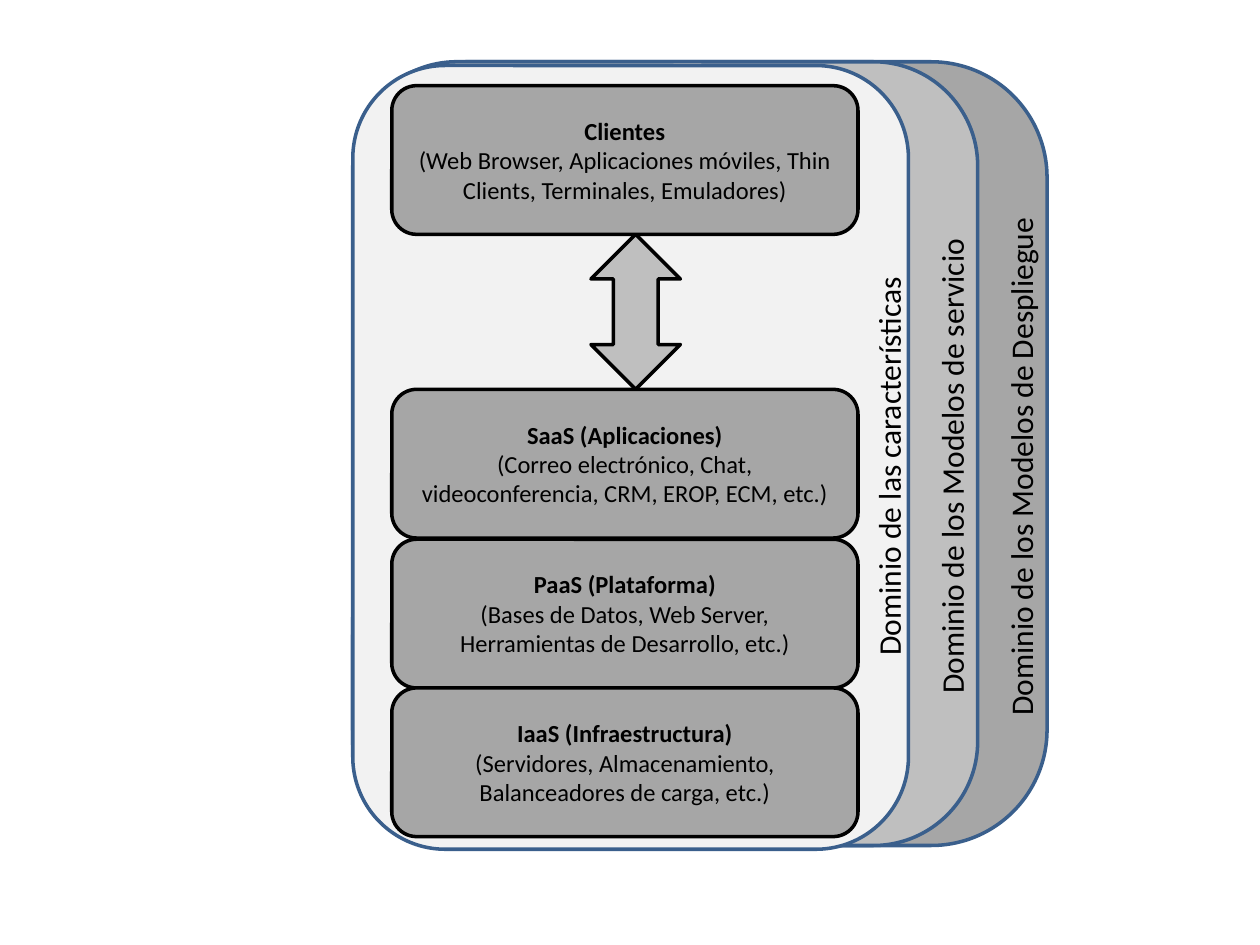
"""Build a slide of the cloud computing layers inside their three nested domains."""
import pptx
import pptx.dml.color
import pptx.enum.shapes
import pptx.enum.text
import pptx.util
from pptx.util import Inches

THEME = {
    "dark": "A6A6A6",
    "middle": "BFBFBF",
    "light": "F2F2F2",
    "border": "3A5F8C",
    "ink": "000000",
    "font": "Calibri",
    "layer_size": 14,
    "domain_size": 18,
}
SHAPES = pptx.enum.shapes.MSO_SHAPE


def colour(name):
    return pptx.dml.color.RGBColor.from_string(THEME[name])


def add_block(kind, left, top, width, height, fill, line):
    block = page.shapes.add_shape(
        kind, Inches(left), Inches(top), Inches(width), Inches(height)
    )
    block.shadow.inherit = False
    block.fill.solid()
    block.fill.fore_color.rgb = colour(fill)
    block.line.color.rgb = colour(line)
    block.line.width = pptx.util.Pt(2)
    return block


def write(paragraph, text, size, bold=False):
    paragraph.text = text
    paragraph.font.name = THEME["font"]
    paragraph.font.size = pptx.util.Pt(THEME[size])
    paragraph.font.bold = bold
    paragraph.font.color.rgb = colour("ink")


deck = pptx.Presentation()
deck.slide_width, deck.slide_height = Inches(10), Inches(7.5)
page = deck.slides.add_slide(deck.slide_layouts[6])

domains = [
    ("Dominio de los Modelos de Despliegue", 0.49, 5.51, "dark", 8.1, 4.2),
    ("Dominio de los Modelos de servicio", 0.49, 4.96, "middle", 7.55, 3.85),
    ("Dominio de las características", 0.52, 4.41, "light", 7.05, 3.24),
]
for name, top, width, fill, centre, length in domains:
    add_block(SHAPES.ROUNDED_RECTANGLE, 2.8, top, width, 6.22, fill, "border")

layers = [
    ("Clientes", "(Web Browser, Aplicaciones móviles, Thin Clients, Terminales, Emuladores)", 0.68),
    ("SaaS (Aplicaciones)", "(Correo electrónico, Chat, videoconferencia, CRM, EROP, ECM, etc.)", 3.09),
    ("PaaS (Plataforma)", "(Bases de Datos, Web Server, Herramientas de Desarrollo, etc.)", 4.28),
    ("IaaS (Infraestructura)", "(Servidores, Almacenamiento, Balanceadores de carga, etc.)", 5.46),
]
for title, examples, top in layers:
    layer = add_block(SHAPES.ROUNDED_RECTANGLE, 3.11, top, 3.7, 1.18, "dark", "ink")
    frame = layer.text_frame
    frame.word_wrap = True
    frame.vertical_anchor = pptx.enum.text.MSO_ANCHOR.MIDDLE
    write(frame.paragraphs[0], title, "layer_size", bold=True)
    write(frame.add_paragraph(), examples, "layer_size")
    for paragraph in frame.paragraphs:
        paragraph.alignment = pptx.enum.text.PP_ALIGN.CENTER

add_block(SHAPES.UP_DOWN_ARROW, 4.69, 1.86, 0.71, 1.23, "middle", "ink")

for name, top, width, fill, centre, length in reversed(domains):
    label = page.shapes.add_textbox(
        Inches(centre - length / 2), Inches(3.48), Inches(length), Inches(0.4)
    )
    label.rotation = 270
    label.text_frame.word_wrap = False
    label.text_frame.auto_size = pptx.enum.text.MSO_AUTO_SIZE.SHAPE_TO_FIT_TEXT
    write(label.text_frame.paragraphs[0], name, "domain_size")

deck.save("out.pptx")
